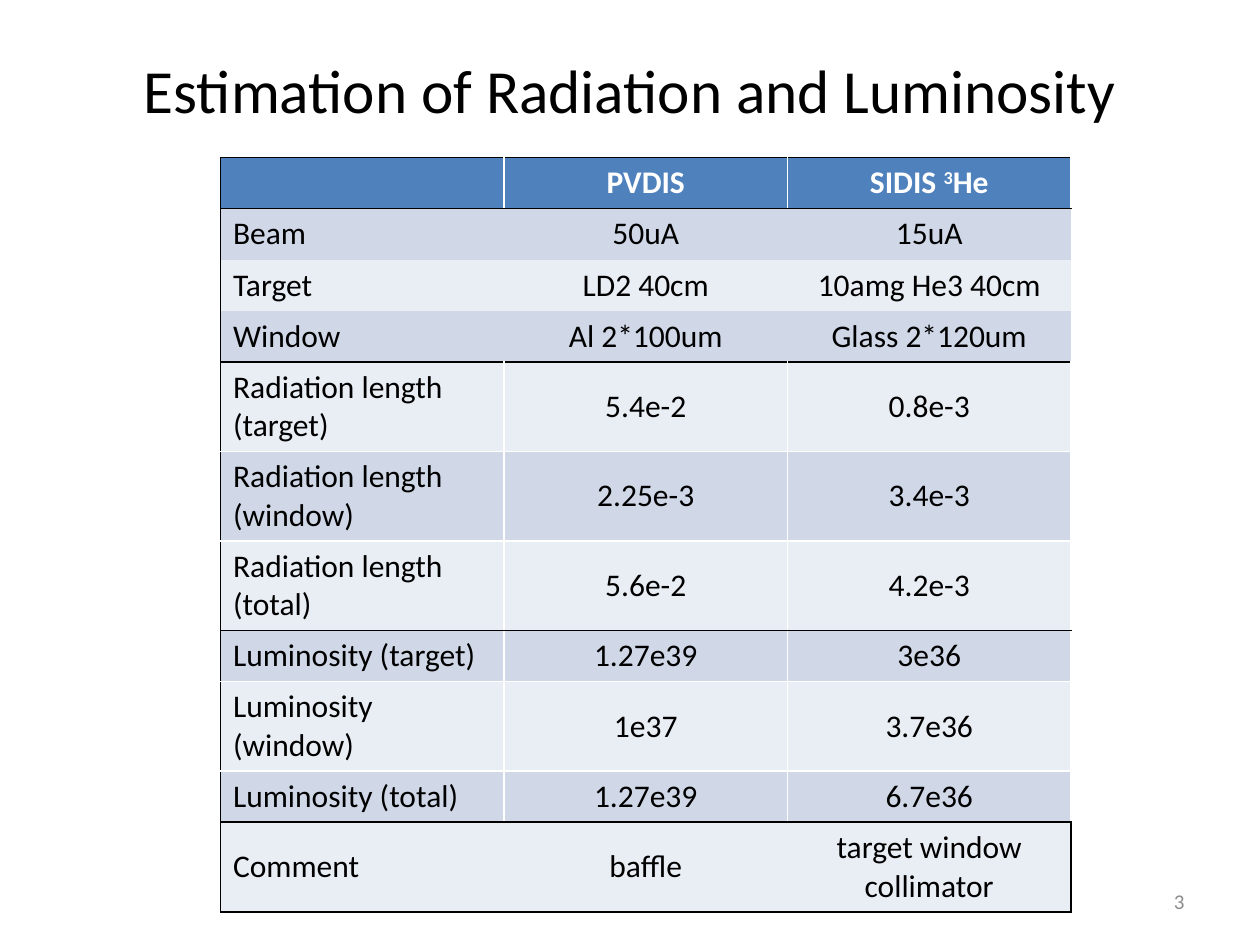
from lxml.etree import SubElement as Sub
from pptx import Presentation
from pptx.dml.color import RGBColor as RGB
from pptx.enum.text import MSO_ANCHOR as ANCHOR, PP_ALIGN as ALIGN
from pptx.oxml.ns import qn
from pptx.util import Pt

HEX = {"black": "000000", "white": "FFFFFF", "head": "4F81BD",
       "dark": "D0D8E8", "light": "E9EDF4", "gray": "8C8C8C"}
ROWS = [
    ("", "PVDIS", "SIDIS "),
    ("Beam", "50uA", "15uA"),
    ("Target", "LD2 40cm", "10amg He3 40cm"),
    ("Window", "Al 2*100um", "Glass 2*120um"),
    ("Radiation length (target)", "5.4e-2", "0.8e-3"),
    ("Radiation length (window)", "2.25e-3", "3.4e-3"),
    ("Radiation length (total)", "5.6e-2", "4.2e-3"),
    ("Luminosity (target)", "1.27e39", "3e36"),
    ("Luminosity (window)", "1e37", "3.7e36"),
    ("Luminosity (total)", "1.27e39", "6.7e36"),
    ("Comment", "baffle", "target window collimator"),
]
LAST = len(ROWS) - 1
RULES = {-1, 0, 3, 6, 9, LAST}
OPEN = {1, 2, 3, LAST}


def style(frame, size, color, align, bold=False):
    for para in frame.paragraphs:
        para.alignment = align
        for font in [para.font] + [run.font for run in para.runs]:
            font.name = "Calibri"
            font.size = Pt(size)
            font.bold = bold
            font.color.rgb = RGB.from_string(HEX[color])


def edge(cell, side, color):
    line = Sub(cell._tc.get_or_add_tcPr(), qn("a:ln" + side), w=str(Pt(1)))
    if color:
        fill = Sub(line, qn("a:solidFill"))
        Sub(fill, qn("a:srgbClr"), val=HEX[color])
    else:
        Sub(line, qn("a:noFill"))


prs = Presentation()
prs.slide_width, prs.slide_height = Pt(720), Pt(540)
slide = prs.slides.add_slide(prs.slide_layouts[5])

title = slide.shapes.title
title.left, title.top, title.width, title.height = Pt(36), Pt(6), Pt(648), Pt(90)
title.text_frame.text = "Estimation of Radiation and Luminosity"
title.text_frame.vertical_anchor = ANCHOR.MIDDLE
style(title.text_frame, 35, "black", ALIGN.CENTER)

table = slide.shapes.add_table(len(ROWS), 3, Pt(126), Pt(90),
                               Pt(486), Pt(29.2 * len(ROWS))).table
for col in table.columns:
    col.width = Pt(162)

for r, row in enumerate(ROWS):
    table.rows[r].height = Pt(29.2)
    inner = None if r in OPEN else "white"
    flat = {n: "black" if n in RULES else None if n in OPEN else "white"
            for n in (r - 1, r)}
    for c, text in enumerate(row):
        cell = table.cell(r, c)
        cell.text_frame.text = text
        if r == 0 and c == 2:
            para = cell.text_frame.paragraphs[0]
            power = para.add_run()
            power.text = "3"
            power._r.get_or_add_rPr().set("baseline", "30000")
            para.add_run().text = "He"
        cell.vertical_anchor = ANCHOR.MIDDLE if r else ANCHOR.TOP
        style(cell.text_frame, 18, "black" if r else "white",
              ALIGN.CENTER if c else ALIGN.LEFT, r == 0)
        edge(cell, "L", inner if c else "black")
        edge(cell, "R", "black" if (r, c) == (LAST, 2) else inner)
        edge(cell, "T", flat[r - 1])
        edge(cell, "B", flat[r])
        cell.fill.solid()
        shade = "head" if r == 0 else "dark" if r % 2 else "light"
        cell.fill.fore_color.rgb = RGB.from_string(HEX[shade])

page = slide.shapes.add_textbox(Pt(516), Pt(500.5), Pt(168), Pt(28.75)).text_frame
page.word_wrap = True
page.vertical_anchor = ANCHOR.MIDDLE
page.text = "3"
style(page, 12, "gray", ALIGN.RIGHT)

prs.save("out.pptx")
